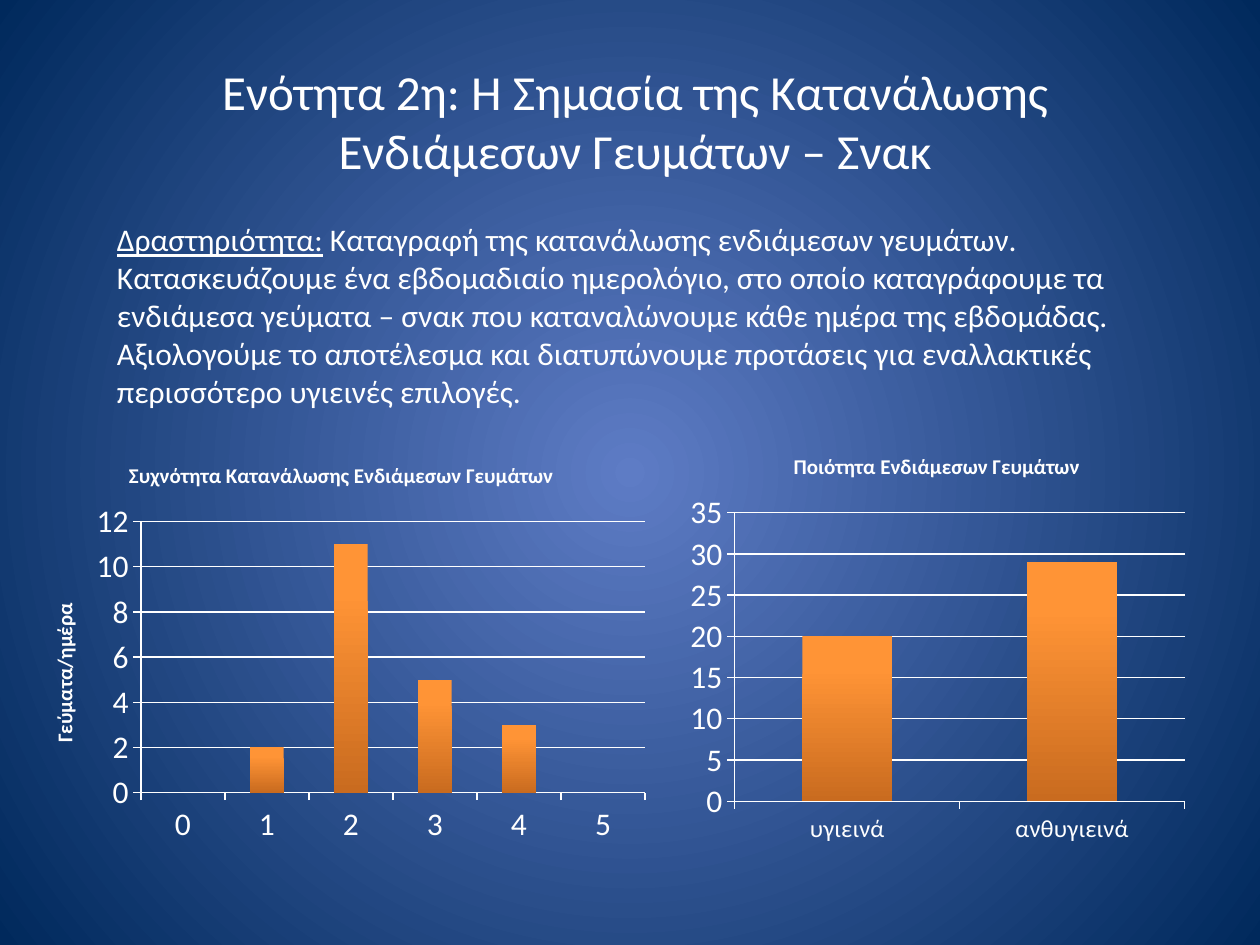
from lxml import etree
from pptx import Presentation, util as u
from pptx.chart.data import CategoryChartData
from pptx.dml.color import RGBColor
from pptx.enum import chart as charts, text
from pptx.oxml import parse_xml
from pptx.oxml.ns import nsdecls, qn

WHITE = "FFFFFF"


def color(hex_string):
    return RGBColor.from_string(hex_string)


def style_font(font, size, **extra):
    """Apply the slide's white Calibri, plus any extra font attributes."""
    values = {"name": "Calibri", "size": u.Pt(size), **extra}
    for name, value in values.items():
        setattr(font, name, value)
    font.color.rgb = color(WHITE)


presentation = Presentation()
presentation.slide_width = u.Inches(10)
presentation.slide_height = u.Inches(7.5)
slide = presentation.slides.add_slide(presentation.slide_layouts[6])

# Radial background, light in the centre
background = slide.background.fill
background.gradient()
for stop, shade in zip(background.gradient_stops, ("5E7CC5", "00295C")):
    stop.color.rgb = color(shade)
gradient = slide.element.find(".//" + qn("a:gradFill"))
gradient.remove(gradient.find(qn("a:lin")))
circle = etree.SubElement(gradient, qn("a:path"), {"path": "circle"})
etree.SubElement(circle, qn("a:fillToRect"), {side: "50000" for side in "ltrb"})

# Title and activity text
text_boxes = [
    ((0.75, 0.44, 8.58, 1.04), 28, text.PP_ALIGN.CENTER, [
        ("Ενότητα 2η: Η Σημασία της Κατανάλωσης Ενδιάμεσων Γευμάτων – Σνακ", False)]),
    ((0.83, 1.7, 8.25, 1.62), 18, text.PP_ALIGN.LEFT, [
        ("Δραστηριότητα:", True),
        (" Καταγραφή της κατανάλωσης ενδιάμεσων γευμάτων. Κατασκευάζουμε ένα "
         "εβδομαδιαίο ημερολόγιο, στο οποίο καταγράφουμε τα ενδιάμεσα γεύματα – σνακ "
         "που καταναλώνουμε κάθε ημέρα της εβδομάδας. Αξιολογούμε το αποτέλεσμα και "
         "διατυπώνουμε προτάσεις για εναλλακτικές περισσότερο υγιεινές επιλογές.", False)]),
]
for box, size, alignment, runs in text_boxes:
    frame = slide.shapes.add_textbox(*map(u.Inches, box)).text_frame
    frame.word_wrap = True
    paragraph = frame.paragraphs[0]
    paragraph.alignment = alignment
    for words, underline in runs:
        run = paragraph.add_run()
        run.text = words
        style_font(run.font, size, underline=underline)

# Column charts; box and plot are left, top, width, height on the slide
column_charts = [
    {"title": "Συχνότητα Κατανάλωσης Ενδιάμεσων Γευμάτων",
     "box": (0.2, 3.51, 5.02, 3.25), "plot": (1.12, 4.14, 4, 2.15),
     "categories": ["0", "1", "2", "3", "4", "5"], "values": [0, 2, 11, 5, 3, 0],
     "category_size": 18, "maximum": 12, "step": 2, "axis_title": "Γεύματα/ημέρα"},
    {"title": "Ποιότητα Ενδιάμεσων Γευμάτων",
     "box": (5.39, 3.44, 4.09, 3.33), "plot": (5.83, 4.07, 3.57, 2.29),
     "categories": ["υγιεινά", "ανθυγιεινά"], "values": [20, 29],
     "category_size": 14, "maximum": 35, "step": 5, "axis_title": None},
]
for item in column_charts:
    data = CategoryChartData()
    data.categories = item["categories"]
    data.add_series("Series 1", item["values"])
    chart = slide.shapes.add_chart(
        charts.XL_CHART_TYPE.COLUMN_CLUSTERED, *map(u.Inches, item["box"]), data).chart
    chart.has_legend = False
    style_font(chart.font, 18)

    category_axis, value_axis = chart.category_axis, chart.value_axis
    value_axis.minimum_scale = 0
    value_axis.maximum_scale = item["maximum"]
    value_axis.major_unit = item["step"]
    value_axis.has_major_gridlines = True
    style_font(category_axis.tick_labels.font, item["category_size"])
    style_font(value_axis.tick_labels.font, 18)
    for axis in (category_axis, value_axis):
        axis.major_tick_mark = charts.XL_TICK_MARK.OUTSIDE
    for line in (category_axis.format.line, value_axis.format.line,
                 value_axis.major_gridlines.format.line):
        line.color.rgb = color(WHITE)
        line.width = u.Pt(0.75)

    titles = [(chart, "chart_title", item["title"])]
    if item["axis_title"]:
        titles.append((value_axis, "axis_title", item["axis_title"]))
    for owner, attribute, words in titles:
        frame = getattr(owner, attribute).text_frame
        frame.text = words
        style_font(frame.paragraphs[0].runs[0].font, 12, bold=True)
    chart.chart_title.include_in_layout = False

    plot = chart.plots[0]
    plot.gap_width = 150
    plot.vary_by_categories = False
    fill = plot.series[0].format.fill
    fill.gradient()
    fill.gradient_angle = 270
    for stop, position, shade in zip(fill.gradient_stops, (0.2, 1), ("FF9436", "C96B1F")):
        stop.position = position
        stop.color.rgb = color(shade)

    left, top, width, height = item["box"]
    plot_left, plot_top, plot_width, plot_height = item["plot"]
    fractions = {"x": (plot_left - left) / width, "y": (plot_top - top) / height,
                 "w": plot_width / width, "h": plot_height / height}
    modes = "".join(f'<c:{key}Mode val="edge"/>' for key in "xy")
    sizes = "".join(f'<c:{key} val="{value:.3f}"/>' for key, value in fractions.items())
    plot_area = chart.element.find(".//" + qn("c:plotArea"))
    for layout in plot_area.findall(qn("c:layout")):
        plot_area.remove(layout)
    plot_area.insert(0, parse_xml(
        f'<c:layout {nsdecls("c")}><c:manualLayout><c:layoutTarget val="inner"/>'
        f'{modes}{sizes}</c:manualLayout></c:layout>'))

presentation.save("out.pptx")
